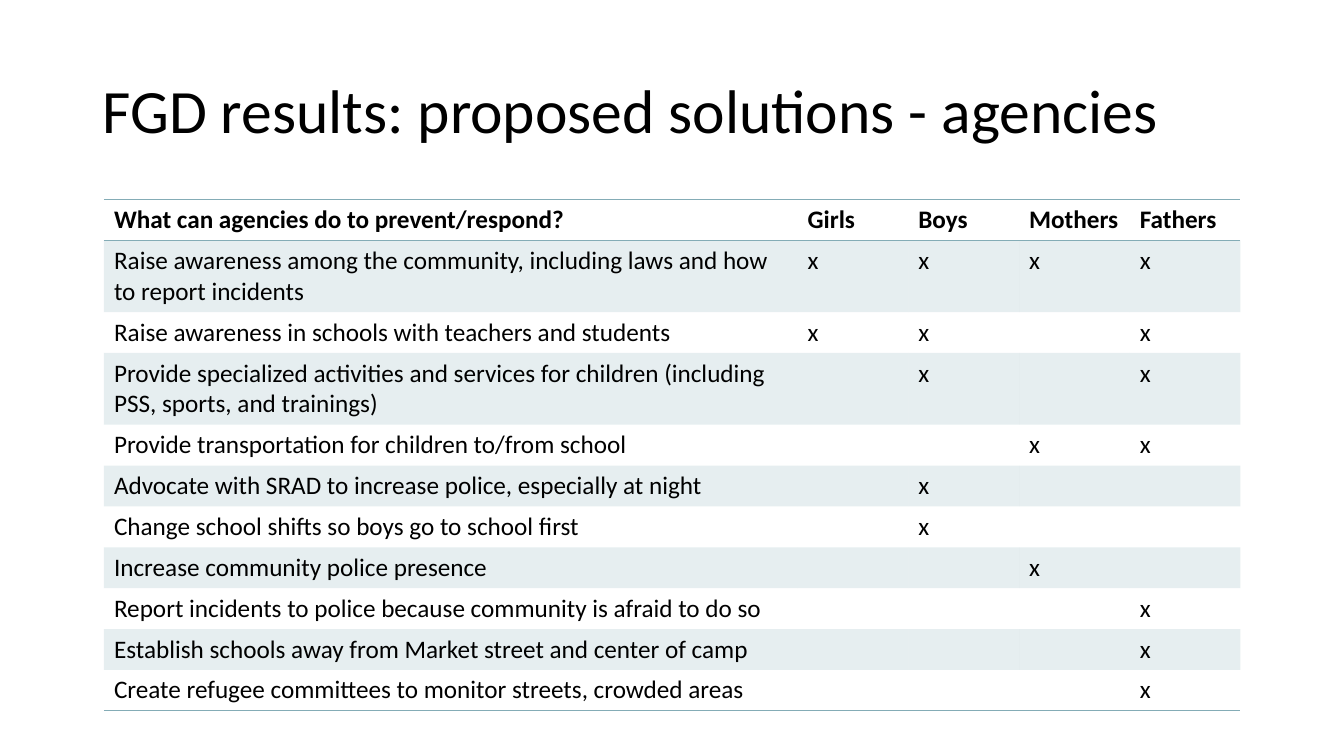
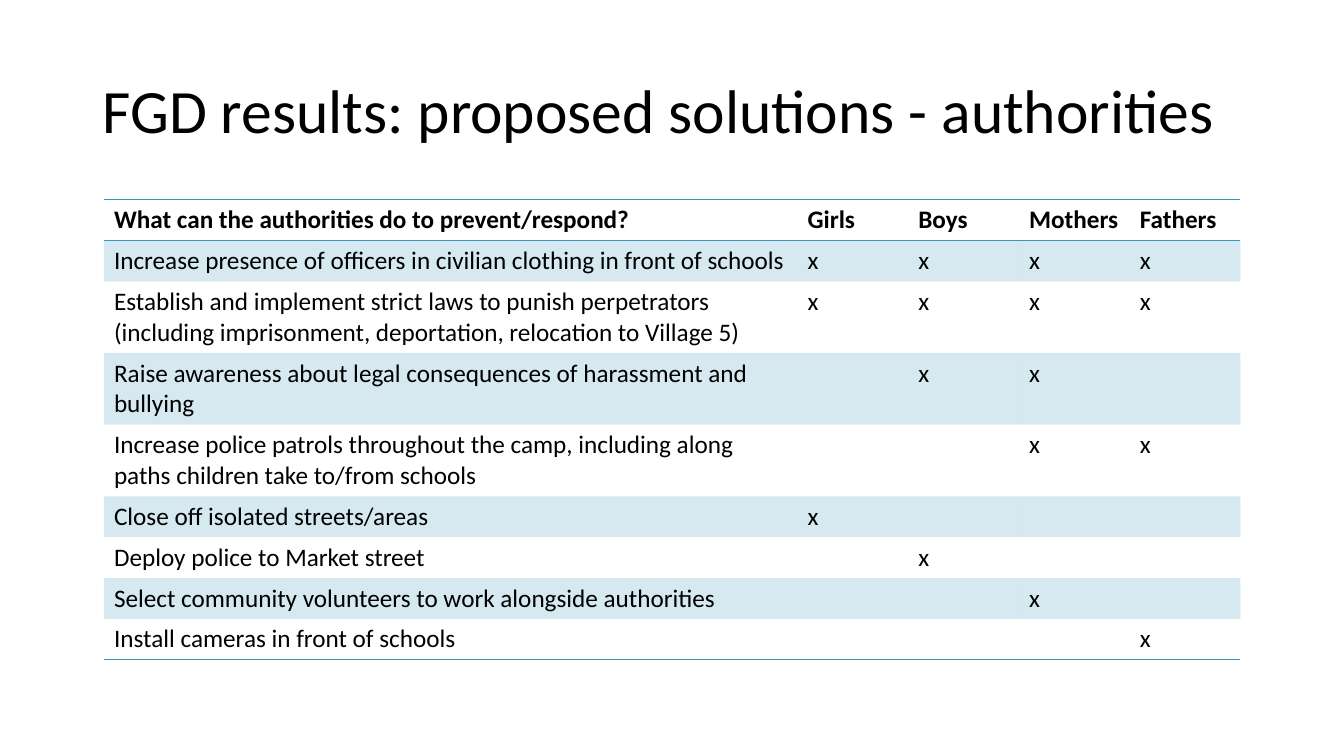
from lxml.etree import SubElement
from pptx import Presentation
from pptx.dml.color import RGBColor
from pptx.enum.text import MSO_ANCHOR, MSO_AUTO_SIZE, PP_ALIGN
from pptx.oxml import parse_xml
from pptx.oxml.ns import nsdecls, qn
from pptx.util import Cm, Pt

COLORS = {"text": "000000", "agencies": "84ACB6", "authorities": "3494BA"}
FONT = "Calibri"
PLAIN_STYLE = "{2D5ABB26-0587-4C30-8999-92F81FD0307C}"
GROUPS = ["Girls", "Boys", "Mothers", "Fathers"]
COL_WIDTHS = [17.48] + [2.79] * len(GROUPS)
ROW_HEIGHT = 1.03

AGENCIES = [
    ("Raise awareness among the community, including laws and how to report incidents", "GBMF"),
    ("Raise awareness in schools with teachers and students", "GBF"),
    ("Provide specialized activities and services for children (including PSS, sports, and trainings)", "BF"),
    ("Provide transportation for children to/from school", "MF"),
    ("Advocate with SRAD to increase police, especially at night", "B"),
    ("Change school shifts so boys go to school first", "B"),
    ("Increase community police presence", "M"),
    ("Report incidents to police because community is afraid to do so", "F"),
    ("Establish schools away from Market street and center of camp", "F"),
    ("Create refugee committees to monitor streets, crowded areas", "F"),
]
AUTHORITIES = [
    ("Increase presence of officers in civilian clothing in front of schools", "GBMF"),
    ("Establish and implement strict laws to punish perpetrators "
     "(including imprisonment, deportation, relocation to Village 5)", "GBMF"),
    ("Raise awareness about legal consequences of harassment and bullying", "BM"),
    ("Increase police patrols throughout the camp, including along paths children take to/from schools", "MF"),
    ("Close off isolated streets/areas", "G"),
    ("Deploy police to Market street", "B"),
    ("Select community volunteers to work alongside authorities", "M"),
    ("Install cameras in front of schools", "F"),
]


def format_text(tf, size, bold=False):
    """Apply the shared font to every run of a text frame."""
    for p in tf.paragraphs:
        for r in p.runs:
            r.font.name = FONT
            r.font.size = Pt(size)
            r.font.bold = bold
            r.font.color.rgb = RGBColor.from_string(COLORS["text"])


def add_title(s, text):
    """Fill and place the title placeholder."""
    sp = s.shapes.title
    sp.left, sp.top, sp.width, sp.height = Cm(2.33), Cm(1.01), Cm(29.21), Cm(3.68)
    tf = sp.text_frame
    tf.text = text
    tf.word_wrap = True
    tf.auto_size = MSO_AUTO_SIZE.NONE
    tf.vertical_anchor = MSO_ANCHOR.MIDDLE
    tf.paragraphs[0].alignment = PP_ALIGN.LEFT
    tf.paragraphs[0].line_spacing = 0.9
    format_text(tf, 44)


def fill_cell(cell, color, banded):
    """Give a cell a light tint, or no fill."""
    if not banded:
        cell.fill.background()
        return
    cell.fill.solid()
    cell.fill.fore_color.rgb = RGBColor.from_string(color)
    srgb = cell._tc.tcPr.find(f"{qn('a:solidFill')}/{qn('a:srgbClr')}")
    SubElement(srgb, qn("a:alpha"), val="20000")


def add_border(cell, side, color):
    """Draw a thin line on the top (T) or bottom (B) of a cell."""
    line = parse_xml(
        f'<a:ln{side} {nsdecls("a")} w="12700"><a:solidFill>'
        f'<a:srgbClr val="{color}"/></a:solidFill></a:ln{side}>')
    cell._tc.get_or_add_tcPr().insert(0, line)


def add_solutions_table(s, question, solutions, color):
    """Add the table that marks which groups proposed each solution."""
    rows = [[question] + GROUPS]
    for solution, marks in solutions:
        rows.append([solution] + ["x" if g[0] in marks else "" for g in GROUPS])
    frame = s.shapes.add_table(
        len(rows), len(COL_WIDTHS), Cm(2.62), Cm(5.03),
        Cm(sum(COL_WIDTHS)), Cm(ROW_HEIGHT * len(rows)))
    table = frame.table
    table.horz_banding = False
    table._tbl.tblPr.find(qn("a:tableStyleId")).text = PLAIN_STYLE
    for col, width in zip(table.columns, COL_WIDTHS):
        col.width = Cm(width)
    for i, values in enumerate(rows):
        table.rows[i].height = Cm(ROW_HEIGHT)
        for cell, value in zip(table.rows[i].cells, values):
            cell.text_frame.text = value
            format_text(cell.text_frame, 18, bold=i == 0)
            fill_cell(cell, color, banded=i % 2 == 1)
            if i in (0, len(rows) - 1):
                add_border(cell, "B", color)
            if i == 0:
                add_border(cell, "T", color)


def add_solutions_slide(prs, topic, question, solutions):
    """Add one slide of proposed solutions."""
    s = prs.slides.add_slide(prs.slide_layouts.get_by_name("Title Only"))
    add_title(s, f"FGD results: proposed solutions - {topic}")
    add_solutions_table(s, question, solutions, COLORS[topic])


def main():
    """Build and save the presentation."""
    prs = Presentation()
    prs.slide_width, prs.slide_height = Cm(33.87), Cm(19.05)
    add_solutions_slide(prs, "agencies", "What can agencies do to prevent/respond?", AGENCIES)
    add_solutions_slide(prs, "authorities", "What can the authorities do to prevent/respond?", AUTHORITIES)
    prs.save("out.pptx")


if __name__ == "__main__":
    main()
